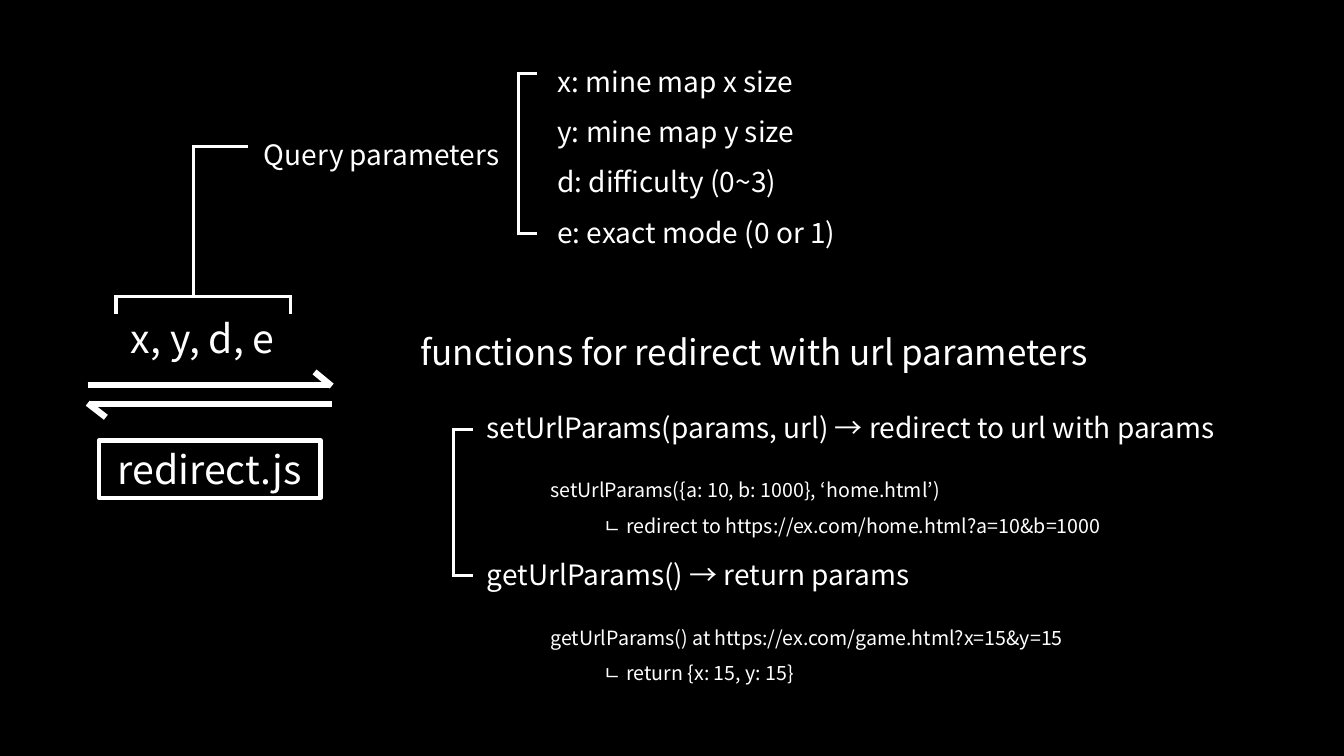
from lxml import etree
from pptx import Presentation
from pptx import util as u
from pptx.dml.color import RGBColor
from pptx.enum import shapes, text
from pptx.oxml.ns import qn

Inches = u.Inches
COLORS = {"background": "000000", "ink": "FFFFFF"}
FONT = "Noto Sans CJK KR"
THIN, THICK = 2.25, 4.5
OVERLAP = 0.015  # half a thin line, closes the corners of brackets


def color(name):
    return RGBColor.from_string(COLORS[name])


def add_line(slide, x1, y1, x2, y2, width=THIN):
    line = slide.shapes.add_connector(
        shapes.MSO_CONNECTOR.STRAIGHT, Inches(x1), Inches(y1), Inches(x2), Inches(y2))
    line.line.color.rgb = color("ink")
    line.line.width = u.Pt(width)
    etree.SubElement(line._element.spPr, qn("a:effectLst"))
    return line


def add_bracket(slide, left, top, height, tick=0.19):
    """Draw a square bracket that opens to the right."""
    bottom = top + height
    add_line(slide, left, bottom + OVERLAP, left, top - OVERLAP)
    for y in (top, bottom):
        add_line(slide, left, y, left + tick, y)


def write(shape, lines, size, spacing=1.0, align=text.PP_ALIGN.LEFT,
          anchor=text.MSO_ANCHOR.TOP):
    frame = shape.text_frame
    frame.text = "\n".join(lines)
    frame.word_wrap = False
    frame.auto_size = text.MSO_AUTO_SIZE.SHAPE_TO_FIT_TEXT
    frame.vertical_anchor = anchor
    for paragraph in frame.paragraphs:
        paragraph.alignment = align
        paragraph.line_spacing = spacing
        for run in paragraph.runs:
            run.font.size = u.Pt(size)
            run.font.name = FONT
            run.font.color.rgb = color("ink")
            east_asian = etree.SubElement(run.font._element, qn("a:ea"))
            east_asian.set("typeface", FONT)


def add_text(slide, left, top, width, height, lines, size, **style):
    box = slide.shapes.add_textbox(
        Inches(left), Inches(top), Inches(width), Inches(height))
    write(box, lines, size, **style)
    return box


def add_redirect_flow(slide, left, top, width):
    """Place the parameter names, the two half arrows and the script's box."""
    right = left + width
    add_text(slide, left + 0.3, top, 1.68, 0.57, ["x, y, d, e"], 28,
             align=text.PP_ALIGN.CENTER)
    forward, back = top + 0.75, top + 0.94
    add_line(slide, left, forward, right - 0.02, forward, THICK)
    add_line(slide, right - 0.17, forward - 0.13, right, forward + 0.01, THICK)
    add_line(slide, left + 0.02, back, right, back, THICK)
    add_line(slide, left, back - 0.01, left + 0.18, back + 0.13, THICK)

    script = slide.shapes.add_shape(
        shapes.MSO_SHAPE.RECTANGLE, Inches(left + 0.11), Inches(top + 1.3),
        Inches(2.2), Inches(0.57))
    script.shadow.inherit = False
    script.fill.background()
    script.line.color.rgb = color("ink")
    script.line.width = u.Pt(3)
    write(script, ["redirect.js"], 28, align=text.PP_ALIGN.CENTER,
          anchor=text.MSO_ANCHOR.MIDDLE)


def add_query_callout(slide, left, top, width, height):
    """Link the parameter names to their label; the box holds bracket and stem."""
    right, bottom, stem = left + width, top + height, left + 0.77
    add_line(slide, stem, bottom, stem, top)
    add_line(slide, stem - OVERLAP, top, stem + 0.54, top)
    add_line(slide, left - OVERLAP, bottom, right + OVERLAP, bottom)
    for x in (left, right):
        add_line(slide, x, bottom, x, bottom + 0.18)
    add_text(slide, stem + 0.6, top - 0.3, 2.63, 0.55, ["Query parameters"], 20,
             spacing=1.5)


def add_parameter_list(slide, left, top, height):
    add_bracket(slide, left, top, height)
    add_text(slide, left + 0.29, top - 0.31, 3.17, 2.06, [
        "x: mine map x size",
        "y: mine map y size",
        "d: difficulty (0~3)",
        "e: exact mode (0 or 1)",
    ], 20, spacing=1.5)


def add_function(slide, left, top, signature, signature_width, example, example_width):
    add_text(slide, left, top, signature_width, 0.44, [signature], 20)
    box = add_text(slide, left + 0.63, top + 0.56, example_width, 0.77, example, 14,
                   spacing=1.5)
    result = box.text_frame.paragraphs[1]._p.get_or_add_pPr()
    result.set("marL", str(Inches(0.53)))
    result.set("indent", "0")


def add_function_list(slide, left, top, pitch):
    functions = [
        ("setUrlParams(params, url) → redirect to url with params", 7.75,
         ["setUrlParams({a: 10, b: 1000}, ‘home.html’)",
          "ㄴ redirect to https://ex.com/home.html?a=10&b=1000"], 6.13),
        ("getUrlParams() → return params", 4.66,
         ["getUrlParams() at https://ex.com/game.html?x=15&y=15",
          "ㄴ return {x: 15, y: 15}"], 5.71),
    ]
    add_bracket(slide, left, top + 0.24, pitch - 0.01)
    for index, function in enumerate(functions):
        add_function(slide, left + 0.23, top + index * pitch, *function)


def set_title(slide, left, top, width, height):
    title = slide.shapes.title
    title.left, title.top = Inches(left), Inches(top)
    title.width, title.height = Inches(width), Inches(height)
    write(title, ["functions for redirect with url parameters"], 25)


def main():
    presentation = Presentation()
    presentation.slide_width = Inches(13.33)
    presentation.slide_height = Inches(7.5)
    slide = presentation.slides.add_slide(presentation.slide_layouts[5])
    slide.background.fill.solid()
    slide.background.fill.fore_color.rgb = color("background")

    set_title(slide, 4.07, 3.23, 7.14, 0.52)
    add_redirect_flow(slide, 0.87, 3.07, 2.42)
    add_query_callout(slide, 1.15, 1.45, 1.73, 1.49)
    add_parameter_list(slide, 5.14, 0.73, 1.59)
    add_function_list(slide, 4.5, 4.02, 1.46)
    presentation.save("out.pptx")


if __name__ == "__main__":
    main()
